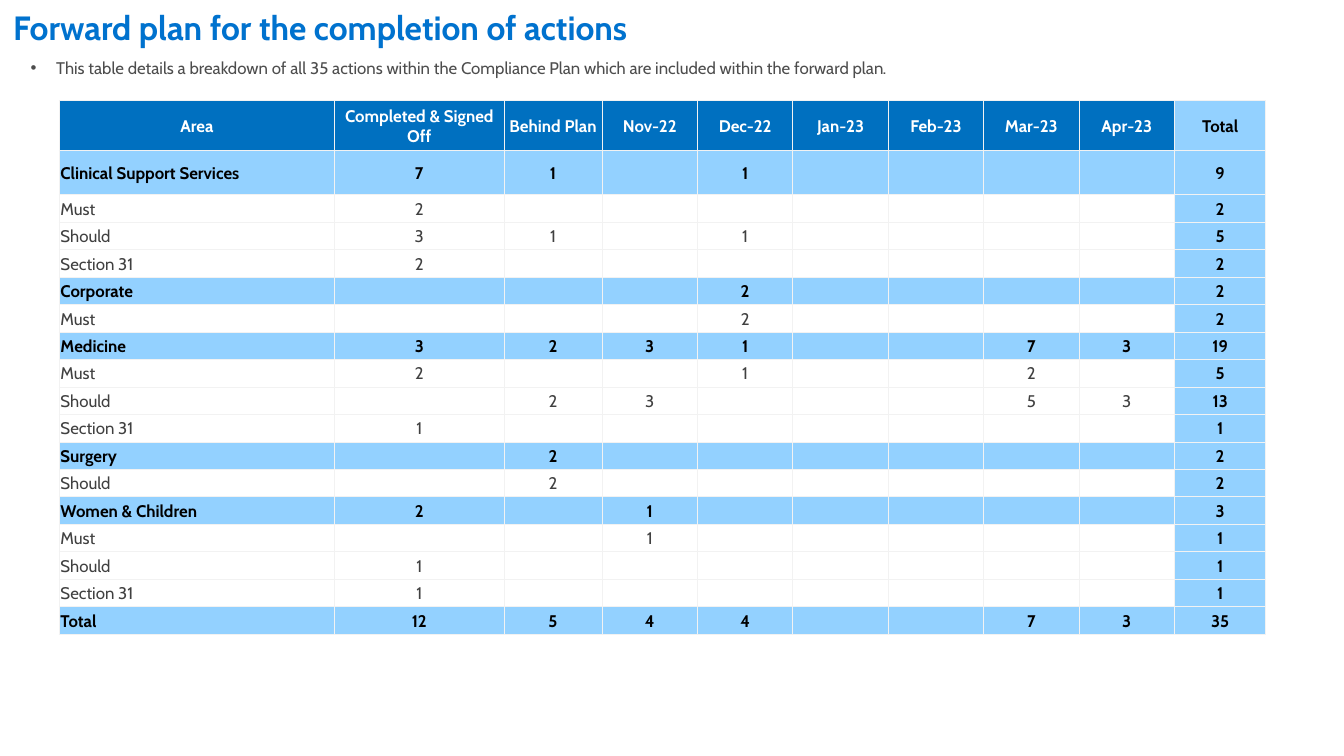
from dataclasses import dataclass

from lxml.etree import SubElement
from pptx import Presentation
from pptx.dml.color import RGBColor
from pptx.enum.text import MSO_ANCHOR, PP_ALIGN
from pptx.oxml.ns import qn
from pptx.util import Inches, Pt


@dataclass(frozen=True)
class Theme:
    font: str = "Cabin"
    title: str = "0072CE"
    body: str = "4D4D4D"
    header: str = "0070C0"
    band: str = "93D1FF"
    grid: str = "F2F2F2"
    white: str = "FFFFFF"
    black: str = "000000"
    detail: str = "404040"
    title_size: float = 18
    text_size: float = 9
    stop_size: float = 10
    grid_width: float = 0.5


def add_run(p, text, font, size, color, bold=False):
    r = p.add_run()
    r.text = text
    r.font.name = font
    r.font.size = Pt(size)
    r.font.bold = bold
    r.font.color.rgb = RGBColor.from_string(color)


class SlideBuilder:
    def __init__(self, slide, theme):
        self.s = slide
        self.theme = theme

    def text_box(self, x, y, w, h):
        tf = self.s.shapes.add_textbox(Inches(x), Inches(y), Inches(w), Inches(h)).text_frame
        tf.word_wrap = True
        return tf.paragraphs[0]

    def title(self, text, *box):
        t = self.theme
        add_run(self.text_box(*box), text, t.font, t.title_size, t.title, bold=True)

    def bullet(self, text, *box):
        t = self.theme
        p = self.text_box(*box)
        p.alignment = PP_ALIGN.JUSTIFY
        pPr = p._p.get_or_add_pPr()
        indent = Inches(0.19)
        pPr.set("marL", str(indent))
        pPr.set("indent", str(-indent))
        SubElement(pPr, qn("a:buFont"), typeface="Arial")
        SubElement(pPr, qn("a:buChar"), char="•")
        add_run(p, text, t.font, t.text_size, t.body)
        add_run(p, ". ", t.font, t.stop_size, t.body)

    def cell(self, cell, text, fill, color, bold, centred):
        t = self.theme
        cell.margin_left = cell.margin_right = cell.margin_top = Inches(0.01)
        cell.margin_bottom = 0
        cell.vertical_anchor = MSO_ANCHOR.MIDDLE
        # Borders come before the fill in the cell properties
        tcPr = cell._tc.get_or_add_tcPr()
        for side in ("lnL", "lnR", "lnT", "lnB"):
            ln = SubElement(tcPr, qn(f"a:{side}"), w=str(Pt(t.grid_width)))
            SubElement(SubElement(ln, qn("a:solidFill")), qn("a:srgbClr"), val=t.grid)
        cell.fill.solid()
        cell.fill.fore_color.rgb = RGBColor.from_string(fill)
        p = cell.text_frame.paragraphs[0]
        if centred:
            p.alignment = PP_ALIGN.CENTER
        if text:
            add_run(p, text, t.font, t.text_size, color, bold)
        else:
            SubElement(p._p, qn("a:endParaRPr"), sz=str(int(t.text_size * 100)))

    def table(self, rows, x, y, widths, heights):
        t = self.theme
        table = self.s.shapes.add_table(
            len(rows), len(widths), Inches(x), Inches(y),
            Inches(sum(widths)), Inches(sum(heights))).table
        table.first_row = table.horz_banding = False
        for column, width in zip(table.columns, widths):
            column.width = Inches(width)
        for row, height in zip(table.rows, heights):
            row.height = Inches(height)
        last = len(widths) - 1
        for i, (kind, values) in enumerate(rows):
            for j, text in enumerate(values):
                if kind == "summary" or j == last:
                    fill, color, bold = t.band, t.black, True
                elif kind == "header":
                    fill, color, bold = t.header, t.white, True
                else:
                    fill, color, bold = t.white, t.detail, False
                self.cell(table.cell(i, j), text, fill, color, bold,
                          centred=j > 0 or kind == "header")


# Action counts by area and kind, one per period
PERIODS = ["Completed & Signed Off", "Behind Plan", "Nov-22", "Dec-22",
           "Jan-23", "Feb-23", "Mar-23", "Apr-23"]
AREAS = {
    "Clinical Support Services": {
        "Must": [2, 0, 0, 0, 0, 0, 0, 0],
        "Should": [3, 1, 0, 1, 0, 0, 0, 0],
        "Section 31": [2, 0, 0, 0, 0, 0, 0, 0],
    },
    "Corporate": {"Must": [0, 0, 0, 2, 0, 0, 0, 0]},
    "Medicine": {
        "Must": [2, 0, 0, 1, 0, 0, 2, 0],
        "Should": [0, 2, 3, 0, 0, 0, 5, 3],
        "Section 31": [1, 0, 0, 0, 0, 0, 0, 0],
    },
    "Surgery": {"Should": [0, 2, 0, 0, 0, 0, 0, 0]},
    "Women & Children": {
        "Must": [0, 0, 1, 0, 0, 0, 0, 0],
        "Should": [1, 0, 0, 0, 0, 0, 0, 0],
        "Section 31": [1, 0, 0, 0, 0, 0, 0, 0],
    },
}


def add_up(count_lists):
    return [sum(column) for column in zip(*count_lists)]


def labelled(label, counts):
    return [label] + [str(n) if n else "" for n in counts + [sum(counts)]]


def plan_rows():
    rows = [("header", ["Area", *PERIODS, "Total"])]
    subtotals = []
    for area, details in AREAS.items():
        subtotals.append(add_up(details.values()))
        rows.append(("summary", labelled(area, subtotals[-1])))
        rows += [("detail", labelled(kind, counts)) for kind, counts in details.items()]
    rows.append(("summary", labelled("Total", add_up(subtotals))))
    return rows


def main():
    # Widescreen slide, 16:9
    prs = Presentation()
    prs.slide_width, prs.slide_height = Inches(10), Inches(10 * 9 / 16)
    slide = SlideBuilder(prs.slides.add_slide(prs.slide_layouts[6]), Theme())

    # Heading and introduction
    slide.title("Forward plan for the completion of actions", 0, 0, 9.75, 0.92)
    slide.bullet("This table details a breakdown of all 35 actions within the Compliance Plan "
                 "which are included within the forward plan", 0.13, 0.37, 9.6, 0.27)

    # Plan table: two taller rows, the rest share the remaining height
    rows = plan_rows()
    top_rows = [0.37, 0.33]
    others = len(rows) - len(top_rows)
    heights = top_rows + [(3.97 - sum(top_rows)) / others] * others
    widths = [2.05, 1.26, 0.73] + [0.71] * 6 + [0.68]
    slide.table(rows, 0.44, 0.75, widths, heights)

    prs.save("out.pptx")


if __name__ == "__main__":
    main()
